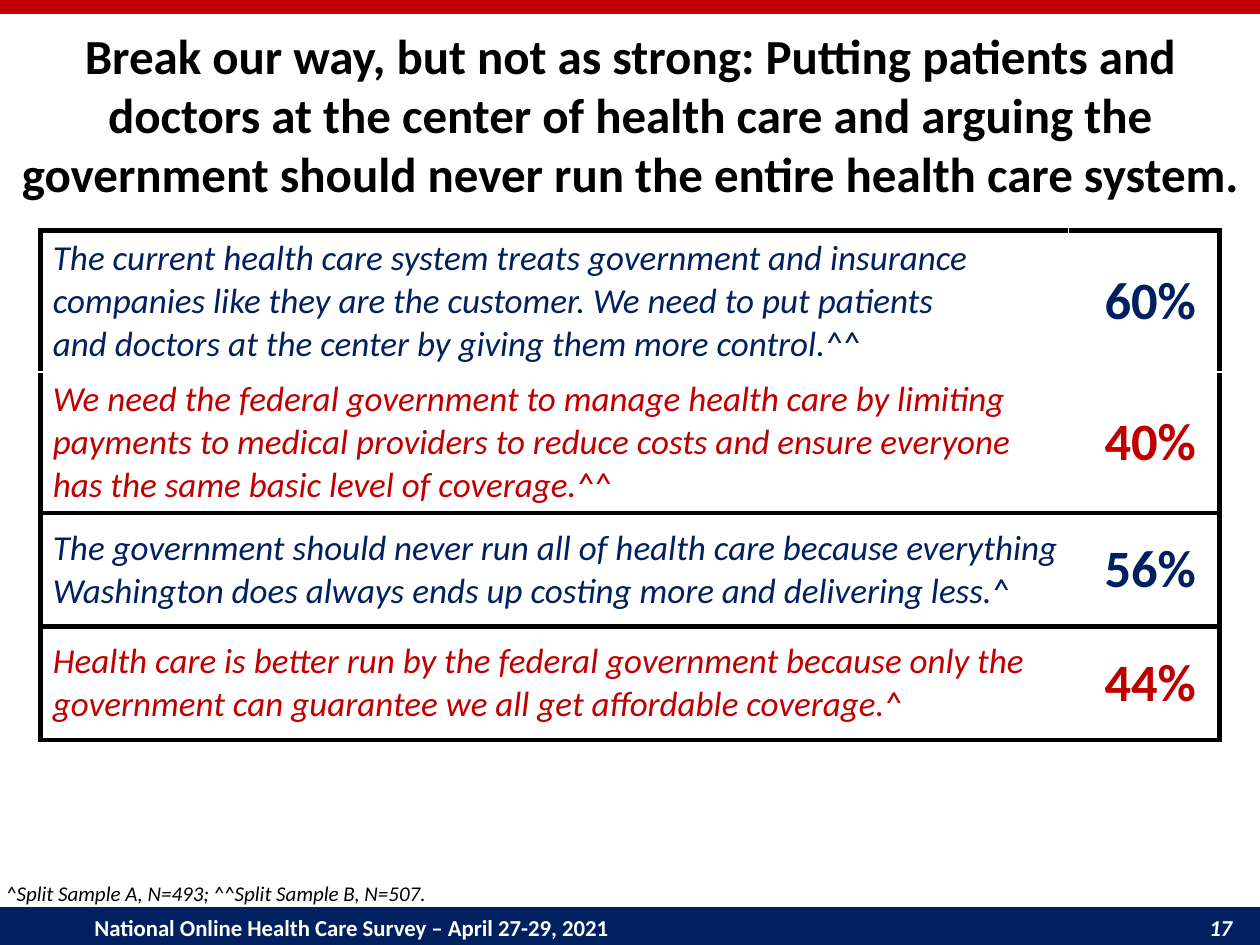
from lxml import etree
from pptx import Presentation
from pptx.dml.color import RGBColor
from pptx.enum.shapes import MSO_SHAPE
from pptx.enum.text import MSO_ANCHOR, PP_ALIGN
from pptx.oxml.ns import qn
from pptx.util import Inches, Pt

RECT = MSO_SHAPE.RECTANGLE
MIDDLE = MSO_ANCHOR.MIDDLE
LEFT, CENTER = PP_ALIGN.LEFT, PP_ALIGN.CENTER
FONT = "Calibri"
NAVY, RED, BLACK, WHITE = "002060", "C00000", "000000", "FFFFFF"

# Statement paragraphs, share, colour, row height, line below the row
ROWS = [
    (["The current health care system treats government and insurance companies "
      "like they are the customer. We need to put patients",
      "and doctors at the center by giving them more control.^^"],
     "60%", NAVY, 1.1, False),
    (["We need the federal government to manage health care by limiting payments to "
      "medical providers to reduce costs and ensure everyone has the same basic "
      "level of coverage.^^"],
     "40%", RED, 1.1, True),
    (["The government should never run all of health care because everything "
      "Washington does always ends up costing more and delivering less.^"],
     "56%", NAVY, 0.9, True),
    (["Health care is better run by the federal government because only the "
      "government can guarantee we all get affordable coverage.^"],
     "44%", RED, 0.9, True),
]


def rgb(value):
    return RGBColor.from_string(value)


def add_run(p, text, size, color, bold=False, italic=False):
    r = p.add_run()
    r.text = text
    r.font.name, r.font.size = FONT, Pt(size)
    r.font.bold, r.font.italic = bold, italic
    r.font.color.rgb = rgb(color)


def add_bar(s, box, color):
    sp = s.shapes.add_shape(RECT, *map(Inches, box))
    sp.shadow.inherit = False
    sp.fill.solid()
    sp.fill.fore_color.rgb = rgb(color)
    sp.line.fill.background()
    return sp


def add_title(s, box, text):
    sp = s.shapes.title
    sp.left, sp.top, sp.width, sp.height = map(Inches, box)
    tf = sp.text_frame
    tf.word_wrap = True
    tf.vertical_anchor = MIDDLE
    p = tf.paragraphs[0]
    p.alignment = CENTER
    add_run(p, text, 28, BLACK, bold=True)


def add_border(cell, side):
    ln = etree.SubElement(cell._tc.get_or_add_tcPr(), qn(f"a:ln{side}"), w=str(Pt(3)))
    fill = etree.SubElement(ln, qn("a:solidFill"))
    etree.SubElement(fill, qn("a:srgbClr"), val=BLACK)


def fill_cell(cell, paragraphs, sides, color, size, align, bold, italic):
    for side in sides:
        add_border(cell, side)
    cell.fill.solid()
    cell.fill.fore_color.rgb = rgb(WHITE)
    cell.vertical_anchor = MIDDLE
    tf = cell.text_frame
    for i, text in enumerate(paragraphs):
        p = tf.add_paragraph() if i else tf.paragraphs[0]
        p.alignment = align
        add_run(p, text, size, color, bold, italic)


def add_statements(s, box, share_width):
    table = s.shapes.add_table(len(ROWS), 2, *map(Inches, box)).table
    table.first_row = table.horz_banding = False
    table.columns[0].width = Inches(box[2] - share_width)
    table.columns[1].width = Inches(share_width)
    line_above = True
    for i, (statement, share, color, height, line_below) in enumerate(ROWS):
        table.rows[i].height = Inches(height)
        # Borders in schema order: left, right, top, bottom
        sides = "T" * line_above + "B" * line_below
        text_cell, share_cell = table.cell(i, 0), table.cell(i, 1)
        fill_cell(text_cell, statement, "L" + sides, color, 20, LEFT, False, True)
        fill_cell(share_cell, [share], "R" + sides, color, 30, CENTER, True, False)
        share_cell.margin_left = Inches(0.2)
        if len(statement) == 1 and height < 1:
            text_cell.margin_right = 0
        line_above = line_below


def add_note(s, box, text):
    tf = s.shapes.add_textbox(*map(Inches, box)).text_frame
    tf.word_wrap = True
    add_run(tf.paragraphs[0], text, 12, BLACK, italic=True)


def add_footer(s, box, text, number):
    tf = add_bar(s, box, NAVY).text_frame
    tf.word_wrap = True
    tf.vertical_anchor = MIDDLE
    tf.margin_left = Inches(0.75)
    p = tf.paragraphs[0]
    p.alignment = LEFT
    # Right tab stop for the page number
    tabs = etree.SubElement(p._p.get_or_add_pPr(), qn("a:tabLst"))
    etree.SubElement(tabs, qn("a:tab"), pos=str(Inches(9.03)), algn="r")
    add_run(p, text + "\t", 13, WHITE, bold=True)
    add_run(p, number, 13, WHITE, bold=True, italic=True)


def main():
    prs = Presentation()
    prs.slide_width, prs.slide_height = Inches(10), Inches(7.5)
    s = prs.slides.add_slide(prs.slide_layouts[5])
    add_bar(s, (0, 0, 10, 0.11), RED)
    add_footer(s, (0, 7.2, 10, 0.32),
               "National Online Health Care Survey – April 27-29, 2021", "17")
    add_title(s, (0, 0.15, 10, 1.51),
              "Break our way, but not as strong: Putting patients and doctors at the "
              "center of health care and arguing the government should never run the "
              "entire health care system.")
    add_statements(s, (0.32, 1.83, 9.36, 4), 1.2)
    add_note(s, (-0.05, 6.94, 4.45, 0.3),
             "^Split Sample A, N=493; ^^Split Sample B, N=507.")
    prs.save("out.pptx")


if __name__ == "__main__":
    main()
